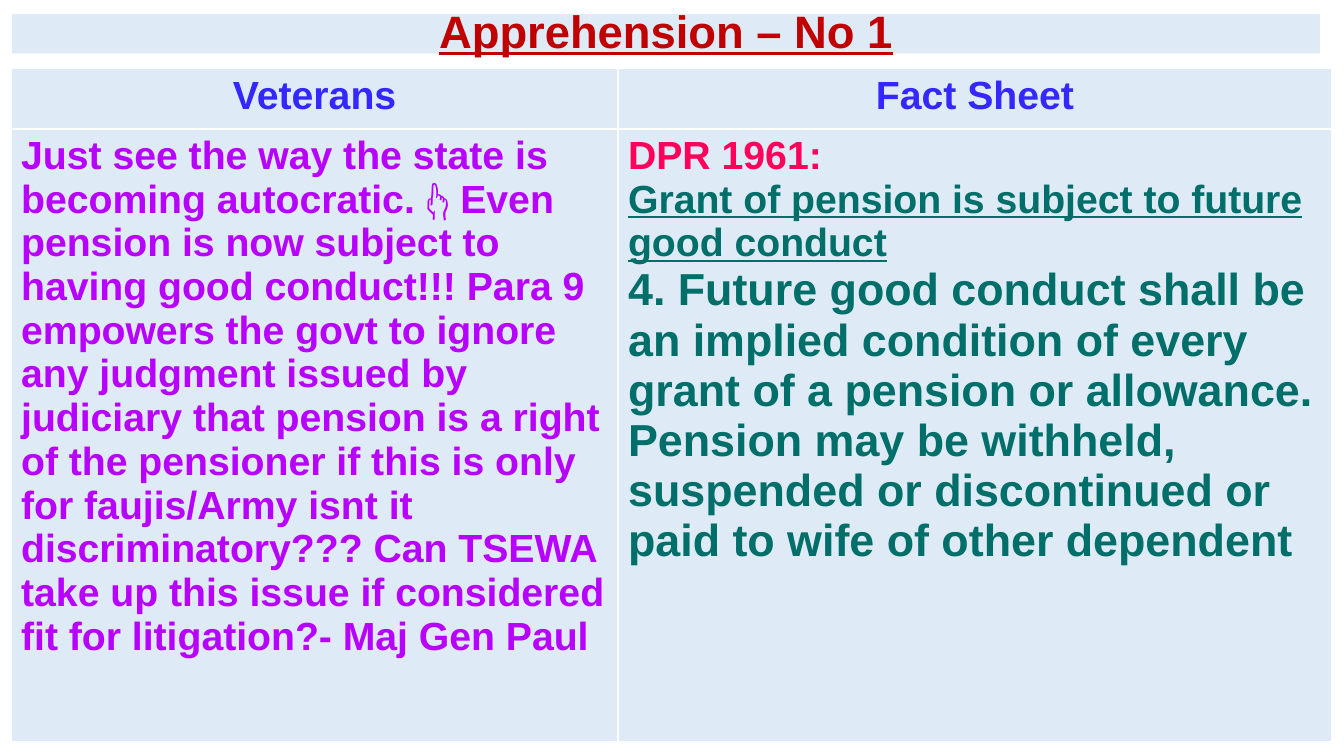
from pptx import Presentation
from pptx.dml.color import RGBColor
from pptx.enum.text import MSO_ANCHOR, MSO_AUTO_SIZE, PP_ALIGN
from pptx.util import Inches, Pt

CENTER, LEFT = PP_ALIGN.CENTER, PP_ALIGN.LEFT
MIDDLE = MSO_ANCHOR.MIDDLE
NO_AUTOFIT = MSO_AUTO_SIZE.NONE
TITLE_ONLY = 5

PALE_BLUE = RGBColor(0xDE, 0xEB, 0xF7)
DARK_RED = RGBColor(0xC0, 0x00, 0x00)
BLUE = RGBColor(0x34, 0x27, 0xFF)
PURPLE = RGBColor(0xB8, 0x00, 0xFF)
PINK = RGBColor(0xFF, 0x00, 0x5B)
TEAL = RGBColor(0x00, 0x6E, 0x69)

# Content: each cell is a list of paragraphs, "\v" breaks a line within one
TITLE = "Apprehension – No 1"
HEADINGS = ["Veterans", "Fact Sheet"]
VETERANS = (
    "Just see the way the state is becoming autocratic. 👆 Even pension is now "
    "subject to having good conduct!!! Para 9 empowers the govt to ignore any "
    "judgment issued by judiciary that pension is a right of the pensioner if "
    "this is only for faujis/Army isnt it discriminatory??? Can TSEWA take up "
    "this issue if considered fit for litigation?- Maj Gen Paul"
)
FACTS = [
    "DPR 1961:",
    "Grant of pension is subject to future good conduct\v"
    "4. Future good conduct shall be an implied condition of every grant of a "
    "pension or allowance.",
    "Pension may be withheld, suspended or discontinued or paid to wife of other "
    "dependent",
]
# Run styles: (size, colour, underline)
HEADING_STYLE = (28, BLUE, False)
VETERANS_STYLE = (28, PURPLE, False)
RULE_NAME_STYLE = (28, PINK, False)
RULE_TITLE_STYLE = (28, TEAL, True)
RULE_TEXT_STYLE = (32, TEAL, False)

ROWS = [
    [([heading], [[HEADING_STYLE]], CENTER) for heading in HEADINGS],
    [
        ([VETERANS], [[VETERANS_STYLE]], LEFT),
        (FACTS, [[RULE_NAME_STYLE], [RULE_TITLE_STYLE, RULE_TEXT_STYLE],
                 [RULE_TEXT_STYLE]], LEFT),
    ],
]
COLUMN_WIDTHS = [6.02, 7.08]
ROW_HEIGHTS = [0.6, 6.08]


def format_runs(paragraph, styles):
    for run, (size, color, underline) in zip(paragraph.runs, styles):
        run.font.name = "Arial"
        run.font.size = Pt(size)
        run.font.bold = True
        run.font.underline = underline
        run.font.color.rgb = color


def fill_cell(cell, paragraphs, styles, alignment):
    cell.fill.solid()
    cell.fill.fore_color.rgb = PALE_BLUE
    cell.text_frame.text = "\n".join(paragraphs)
    for paragraph, run_styles in zip(cell.text_frame.paragraphs, styles):
        paragraph.alignment = alignment
        format_runs(paragraph, run_styles)


def main():
    prs = Presentation()
    prs.slide_width, prs.slide_height = Inches(13.33), Inches(7.5)
    slide = prs.slides.add_slide(prs.slide_layouts[TITLE_ONLY])

    # Title band
    title = slide.shapes.title
    title.left, title.top = Inches(0.12), Inches(0.14)
    title.width, title.height = Inches(12.97), Inches(0.39)
    title.fill.solid()
    title.fill.fore_color.rgb = PALE_BLUE
    title.text_frame.text = TITLE
    title.text_frame.auto_size = NO_AUTOFIT
    title.text_frame.vertical_anchor = MIDDLE
    heading = title.text_frame.paragraphs[0]
    heading.alignment = CENTER
    heading.line_spacing = 0.9
    format_runs(heading, [(32.4, DARK_RED, True)])

    # Comparison table
    comparison = slide.shapes.add_table(
        len(ROWS), len(COLUMN_WIDTHS), Inches(0.11), Inches(0.68),
        Inches(sum(COLUMN_WIDTHS)), Inches(sum(ROW_HEIGHTS))).table
    for column, width in zip(comparison.columns, COLUMN_WIDTHS):
        column.width = Inches(width)
    for row, height, contents in zip(comparison.rows, ROW_HEIGHTS, ROWS):
        row.height = Inches(height)
        for cell, content in zip(row.cells, contents):
            fill_cell(cell, *content)

    prs.save("out.pptx")


if __name__ == "__main__":
    main()
